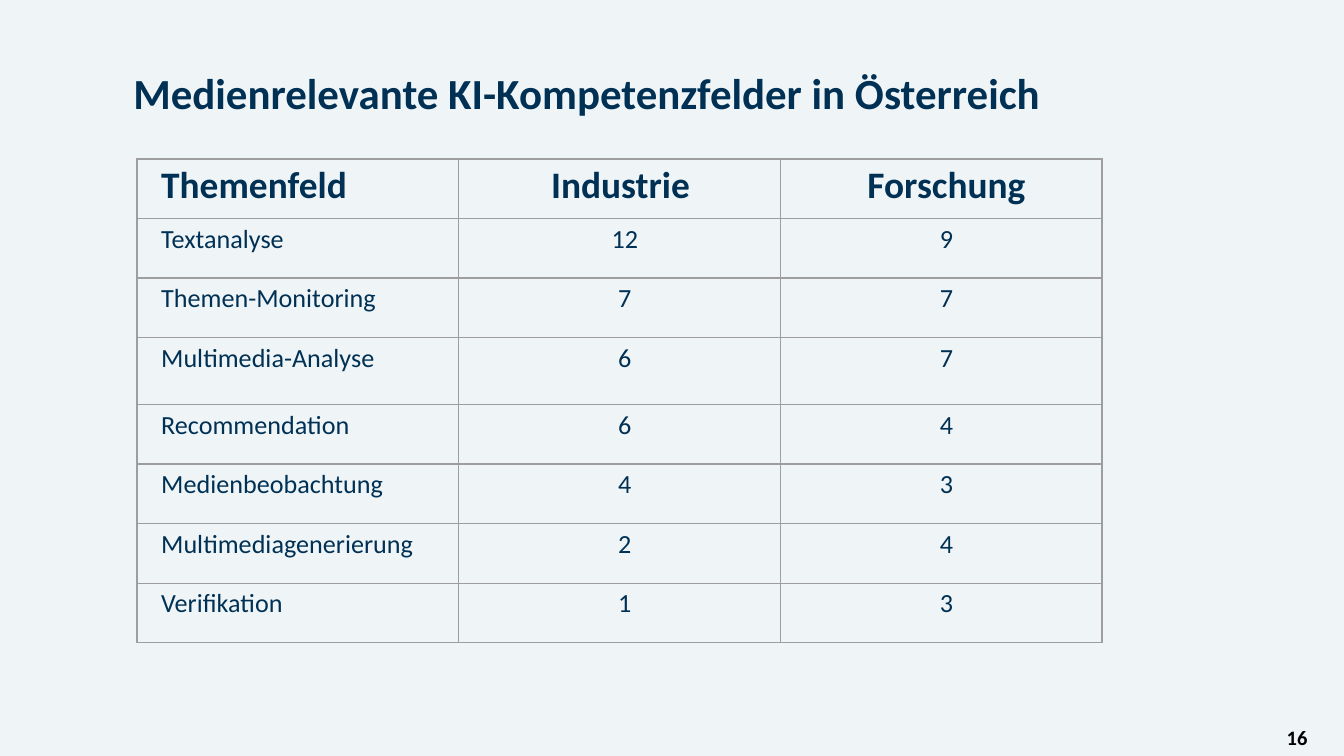
from lxml import etree
from pptx import Presentation, util as u
from pptx.dml.color import RGBColor
from pptx.enum import text
from pptx.oxml.ns import qn

PX = 914400 / 134.4
NAVY, BLACK, GREY, PALE = "003154", "000000", "9E9E9E", "EFF4F7"
LEFT, CENTER, RIGHT = text.PP_ALIGN.LEFT, text.PP_ALIGN.CENTER, text.PP_ALIGN.RIGHT

FIELDS = [
    ("Themenfeld", "Industrie ", "Forschung"),
    ("Textanalyse", "12", "9"),
    ("Themen-Monitoring", "7", "7"),
    ("Multimedia-Analyse", "6", "7"),
    ("Recommendation", "6", "4"),
    ("Medienbeobachtung", "4", "3"),
    ("Multimediagenerierung", "2", "4"),
    ("Verifikation", "1", "3"),
]
TALL_ROW, TALL_HEIGHT = 3, 67


def px(length):
    return u.Emu(round(length * PX))


def rgb(color):
    return RGBColor.from_string(color)


def write(frame, words, size, color, bold, align):
    frame.text = words
    paragraph = frame.paragraphs[0]
    paragraph.alignment = align
    font = paragraph.runs[0].font
    font.name, font.size, font.bold = "Calibri", u.Pt(size), bold
    font.color.rgb = rgb(color)
    return paragraph


def set_frame(frame):
    frame.word_wrap = True
    frame.auto_size = text.MSO_AUTO_SIZE.NONE
    frame.vertical_anchor = text.MSO_ANCHOR.MIDDLE
    frame.margin_left = frame.margin_right = u.Inches(0.07)
    frame.margin_top = frame.margin_bottom = u.Inches(0.04)


def add_title(slide, left, top, width, height):
    title = slide.shapes.title
    title.left, title.top, title.width, title.height = map(px, (left, top, width, height))
    set_frame(title.text_frame)
    heading = write(title.text_frame, "Medienrelevante KI-Kompetenzfelder in Österreich",
                    23, NAVY, True, LEFT)
    heading.line_spacing = 0.9


def add_page_number(slide, left, top, width, height):
    number = slide.shapes.add_textbox(*map(px, (left, top, width, height)))
    set_frame(number.text_frame)
    write(number.text_frame, "16", 11, BLACK, True, RIGHT)


def set_borders(cell):
    properties = cell._tc.get_or_add_tcPr()
    for position, side in enumerate(("a:lnL", "a:lnR", "a:lnT", "a:lnB")):
        line = etree.Element(qn(side), w=str(u.Pt(0.75)))
        fill = etree.SubElement(line, qn("a:solidFill"))
        etree.SubElement(fill, qn("a:srgbClr"), val=GREY)
        properties.insert(position, line)


def fill_cell(cell, words, is_header, align):
    cell.fill.background()
    set_borders(cell)
    paragraph = write(cell.text_frame, words, 20 if is_header else 14, NAVY, is_header, align)
    paragraph.line_spacing = 0.9
    paragraph.space_before = u.Pt(7.5)
    indents = paragraph._p.get_or_add_pPr()
    indents.set("marL", str(u.Inches(0.08)))
    indents.set("indent", "0")


def add_fields_table(slide, left, top, width, height):
    frame = slide.shapes.add_table(len(FIELDS), len(FIELDS[0]),
                                   *map(px, (left, top, width, height)))
    table = frame.table
    table.first_row = table.horz_banding = False
    for column in table.columns:
        column.width = px(width / len(FIELDS[0]))
    row_height = (height - TALL_HEIGHT) / (len(FIELDS) - 1)
    for r, field in enumerate(FIELDS):
        table.rows[r].height = px(TALL_HEIGHT if r == TALL_ROW else row_height)
        for c, words in enumerate(field):
            fill_cell(table.cell(r, c), words, r == 0, CENTER if c else LEFT)


def main():
    deck = Presentation()
    deck.slide_width, deck.slide_height = px(1344), px(756)
    slide = deck.slides.add_slide(deck.slide_layouts[5])
    slide.background.fill.solid()
    slide.background.fill.fore_color.rgb = rgb(PALE)
    add_page_number(slide, 1015, 717, 302, 40)
    add_title(slide, 124, 55, 1158, 81)
    add_fields_table(slide, 137, 159, 965, 484)
    deck.save("out.pptx")


if __name__ == "__main__":
    main()
